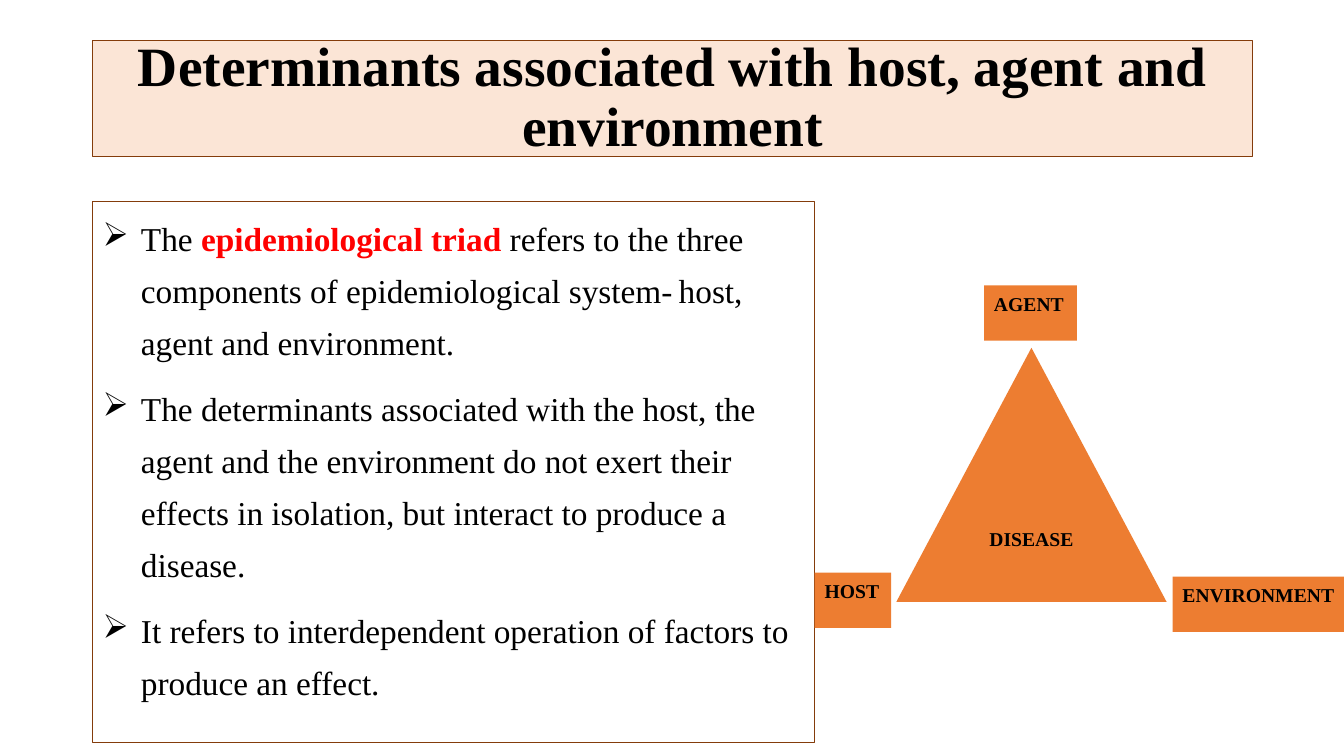
from lxml import etree
from pptx import Presentation
from pptx.dml.color import RGBColor
from pptx.enum import shapes, text
from pptx.oxml import ns
from pptx.util import Inches, Pt

FONT = "Times New Roman"
BLACK, RED, ORANGE, PEACH, BROWN = "000000", "FF0000", "ED7D31", "FBE5D6", "843C0B"

TITLE = "Determinants associated with host, agent and environment"
TITLE_BOX = (0.92, 0.4, 11.5, 1.15)
POINTS_BOX = (0.92, 2, 7.16, 5.37)
BODY = {"size": 23.8}
POINTS = [
    [("The ", BODY),
     ("epidemiological triad ", {**BODY, "color": RED, "bold": True}),
     ("refers to the three components of epidemiological system-", BODY),
     (" ", {"size": 20.4, "font": "Calibri"}),
     ("host, agent and environment.", BODY)],
    [("The determinants associated with the host, the agent and the environment "
      "do not exert their effects in isolation, but interact to produce a disease.", BODY)],
    [("It refers to interdependent operation of factors to produce an effect.", BODY)],
]
DISEASE = ("DISEASE", (8.89, 3.45, 2.68, 2.52))
CORNERS = [
    ("AGENT", (9.76, 2.83, 0.92, 0.55)),
    ("HOST", (8.08, 5.68, 0.76, 0.55)),
    ("ENVIRONMENT", (11.63, 5.72, 1.7, 0.55)),
]


def rgb(value):
    return RGBColor.from_string(value)


def inches(box):
    return [Inches(length) for length in box]


def add_run(paragraph, words, size, color=BLACK, bold=False, font=FONT):
    run = paragraph.add_run()
    run.text = words
    run.font.size = Pt(size)
    run.font.name = font
    run.font.bold = bold
    run.font.color.rgb = rgb(color)


def outline(box):
    box.line.color.rgb = rgb(BROWN)
    box.line.width = Pt(0.75)


def add_bullet(paragraph):
    properties = paragraph._p.get_or_add_pPr()
    properties.set("marL", str(Inches(0.38)))
    properties.set("indent", str(-Inches(0.38)))
    etree.SubElement(properties, ns.qn("a:buChar")).set("char", "➢")


def add_label(group, kind, words, box, align, anchor, wrap):
    part = group.shapes.add_shape(kind, *inches(box))
    part.shadow.inherit = False
    part.fill.solid()
    part.fill.fore_color.rgb = rgb(ORANGE)
    part.line.fill.background()
    frame = part.text_frame
    frame.word_wrap = wrap
    frame.vertical_anchor = anchor
    label = frame.paragraphs[0]
    label.alignment = align
    label.line_spacing = 1.07
    label.space_after = Pt(8)
    add_run(label, words, 14, bold=True)


def main():
    deck = Presentation()
    deck.slide_width, deck.slide_height = Inches(13.33), Inches(7.5)
    slide = deck.slides.add_slide(deck.slide_layouts[5])

    title = slide.shapes.title
    title.left, title.top, title.width, title.height = inches(TITLE_BOX)
    title.fill.solid()
    title.fill.fore_color.rgb = rgb(PEACH)
    outline(title)
    title.text_frame.auto_size = text.MSO_AUTO_SIZE.NONE
    title.text_frame.vertical_anchor = text.MSO_ANCHOR.MIDDLE
    heading = title.text_frame.paragraphs[0]
    heading.alignment = text.PP_ALIGN.CENTER
    heading.line_spacing = 0.9
    add_run(heading, TITLE, 39.6, bold=True)

    points = slide.shapes.add_textbox(*inches(POINTS_BOX))
    outline(points)
    points.text_frame.word_wrap = True
    for index, runs in enumerate(POINTS):
        point = points.text_frame.paragraphs[0] if index == 0 else points.text_frame.add_paragraph()
        add_bullet(point)
        point.line_spacing = 1.3
        point.space_before = Pt(10 if index else 0)
        for words, style in runs:
            add_run(point, words, **style)

    triad = slide.shapes.add_group_shape()
    add_label(triad, shapes.MSO_SHAPE.ISOSCELES_TRIANGLE, *DISEASE,
              text.PP_ALIGN.CENTER, text.MSO_ANCHOR.MIDDLE, True)
    for words, box in CORNERS:
        add_label(triad, shapes.MSO_SHAPE.RECTANGLE, words, box,
                  text.PP_ALIGN.LEFT, text.MSO_ANCHOR.TOP, False)

    deck.save("out.pptx")


if __name__ == "__main__":
    main()
